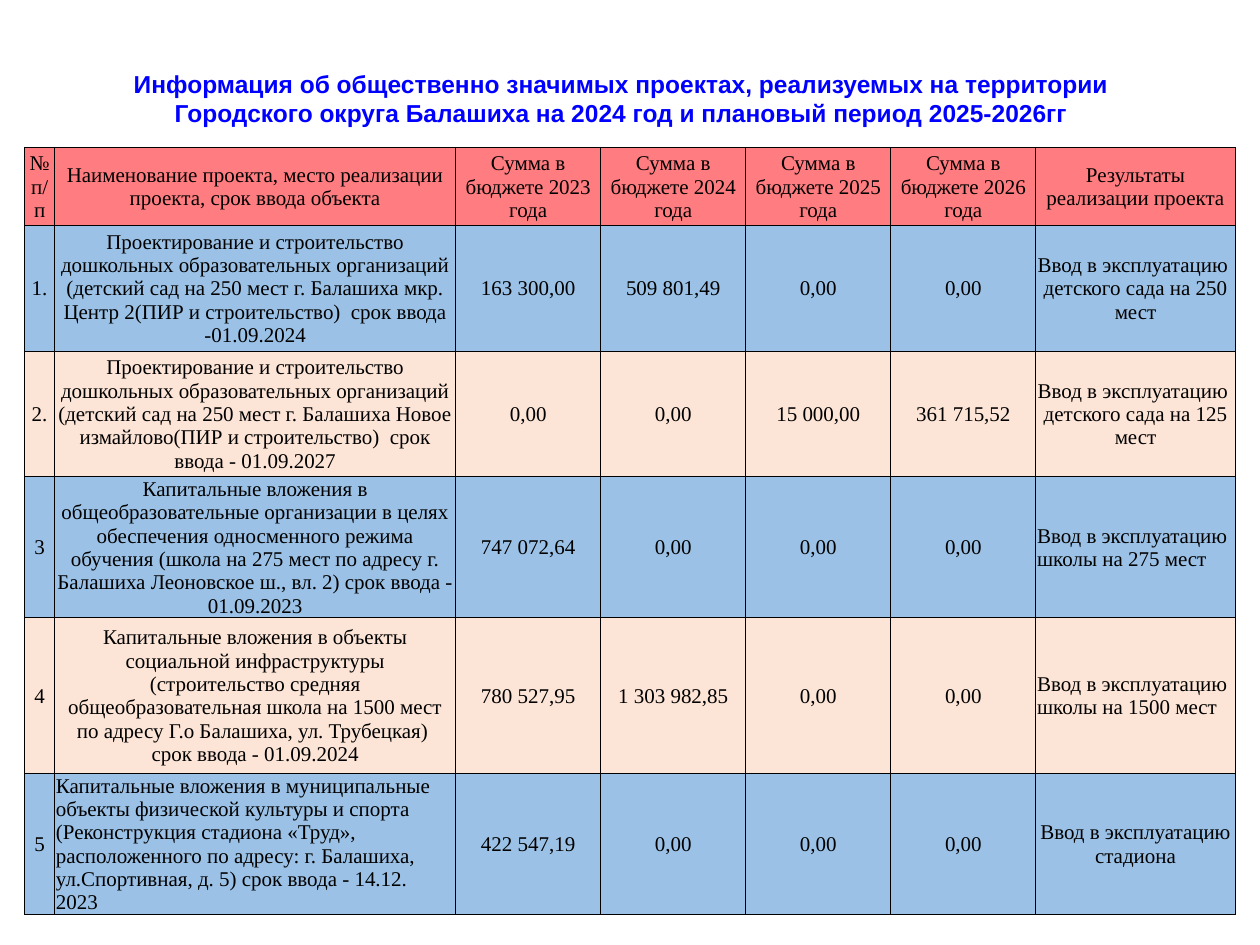
import typing

import pptx
import pptx.dml.color
import pptx.enum.text
import pptx.oxml
import pptx.oxml.ns
import pptx.util

Pt = pptx.util.Pt
Align = pptx.enum.text.PP_ALIGN
Anchor = pptx.enum.text.MSO_ANCHOR

HEADER_FILL = "FF7C80"
ROW_FILLS = ("9BC2E6", "FCE4D6")
COLUMN_WIDTHS = (17.3, 229.1, 82.9, 82.9, 82.9, 82.9, 113.9)
ROW_HEIGHTS = (44.6, 71.8, 71.8, 78.5, 88.9, 79.6)
BUDGET_YEARS = range(2023, 2027)
TITLE = (
    "Информация об общественно значимых проектах, реализуемых на территории "
    "Городского округа Балашиха на 2024 год и плановый период 2025-2026гг"
)


class Project(typing.NamedTuple):
    number: str
    name: str
    sums: tuple[str, ...]
    result: str
    name_align: Align = Align.CENTER
    result_align: Align = Align.CENTER


PROJECTS = (
    Project(
        "1.",
        "Проектирование и строительство дошкольных образовательных организаций "
        "(детский сад на 250 мест г. Балашиха мкр. Центр 2(ПИР и строительство)  "
        "срок ввода -01.09.2024",
        ("163 300,00", "509 801,49", "0,00", "0,00"),
        "Ввод в эксплуатацию  детского сада на 250 мест",
    ),
    Project(
        "2.",
        "Проектирование и строительство дошкольных образовательных организаций "
        "(детский сад на 250 мест г. Балашиха Новое измайлово(ПИР и строительство)  "
        "срок ввода - 01.09.2027",
        ("0,00", "0,00", "15 000,00", "361 715,52"),
        "Ввод в эксплуатацию  детского сада на 125 мест",
    ),
    Project(
        "3",
        "Капитальные вложения в общеобразовательные организации в целях обеспечения "
        "односменного режима обучения (школа на 275 мест по адресу г. Балашиха "
        "Леоновское ш., вл. 2) срок ввода - 01.09.2023",
        ("747 072,64", "0,00", "0,00", "0,00"),
        "Ввод в эксплуатацию школы на 275 мест",
        result_align=Align.LEFT,
    ),
    Project(
        "4",
        "Капитальные вложения в объекты социальной инфраструктуры (строительство "
        "средняя общеобразовательная школа на 1500 мест по адресу Г.о Балашиха, "
        "ул. Трубецкая)  срок ввода - 01.09.2024",
        ("780 527,95", "1 303 982,85", "0,00", "0,00"),
        "Ввод в эксплуатацию школы на 1500 мест",
        result_align=Align.LEFT,
    ),
    Project(
        "5",
        "Капитальные вложения в муниципальные объекты физической культуры и спорта "
        "(Реконструкция стадиона «Труд», расположенного по адресу: г. Балашиха, "
        "ул.Спортивная, д. 5) срок ввода - 14.12. 2023",
        ("422 547,19", "0,00", "0,00", "0,00"),
        "Ввод в эксплуатацию стадиона",
        name_align=Align.LEFT,
    ),
)


def color(value: str) -> pptx.dml.color.RGBColor:
    return pptx.dml.color.RGBColor.from_string(value)


def add_span(para, text: str, font: str, size: float, ink: str, bold: bool = False) -> None:
    span = para.add_run()
    span.text = text
    span.font.name = font
    span.font.size = Pt(size)
    span.font.bold = bold
    span.font.color.rgb = color(ink)


def add_borders(cell) -> None:
    properties = cell._tc.get_or_add_tcPr()
    for side in ("lnL", "lnR", "lnT", "lnB"):
        properties.append(pptx.oxml.parse_xml(
            f'<a:{side} {pptx.oxml.ns.nsdecls("a")} w="{Pt(0.5)}">'
            f'<a:solidFill><a:srgbClr val="000000"/></a:solidFill></a:{side}>'
        ))


def fill_cell(cell, text: str, fill: str, align: Align = Align.CENTER) -> None:
    add_borders(cell)
    cell.fill.solid()
    cell.fill.fore_color.rgb = color(fill)
    cell.margin_left = cell.margin_right = cell.margin_top = Pt(0.7)
    cell.margin_bottom = Pt(0)
    cell.vertical_anchor = Anchor.MIDDLE
    para = cell.text_frame.paragraphs[0]
    para.alignment = align
    add_span(para, text, "Times New Roman", 12, "000000")


def add_title(page) -> None:
    box = page.shapes.title
    box.left, box.top, box.width, box.height = Pt(31), Pt(28), Pt(648), Pt(56.2)
    frame = box.text_frame
    frame.auto_size = pptx.enum.text.MSO_AUTO_SIZE.NONE
    frame.vertical_anchor = Anchor.MIDDLE
    para = frame.paragraphs[0]
    para.alignment = Align.CENTER
    add_span(para, TITLE, "Arial", 14, "0000FF", bold=True)


def add_project_table(page) -> None:
    table = page.shapes.add_table(
        len(ROW_HEIGHTS), len(COLUMN_WIDTHS),
        Pt(14), Pt(84.2), Pt(sum(COLUMN_WIDTHS)), Pt(sum(ROW_HEIGHTS)),
    ).table
    table.first_row = False
    table.horz_banding = False
    for column, width in zip(table.columns, COLUMN_WIDTHS):
        column.width = Pt(width)
    for row, height in zip(table.rows, ROW_HEIGHTS):
        row.height = Pt(height)

    headings = (
        "№ п/п",
        "Наименование проекта, место реализации проекта, срок ввода объекта",
        *(f"Сумма в бюджете {year} года" for year in BUDGET_YEARS),
        "Результаты реализации проекта",
    )
    for index, heading in enumerate(headings):
        fill_cell(table.cell(0, index), heading, HEADER_FILL)

    for index, project in enumerate(PROJECTS):
        fill = ROW_FILLS[index % 2]
        cells = table.rows[index + 1].cells
        texts = (project.number, project.name, *project.sums, project.result)
        aligns = (
            Align.CENTER, project.name_align,
            *(Align.CENTER for _ in project.sums), project.result_align,
        )
        for cell, text, align in zip(cells, texts, aligns):
            fill_cell(cell, text, fill, align)


def main() -> None:
    deck = pptx.Presentation()
    deck.slide_width, deck.slide_height = Pt(720), Pt(540)
    page = deck.slides.add_slide(deck.slide_layouts[5])
    add_title(page)
    add_project_table(page)
    deck.save("out.pptx")


if __name__ == "__main__":
    main()
